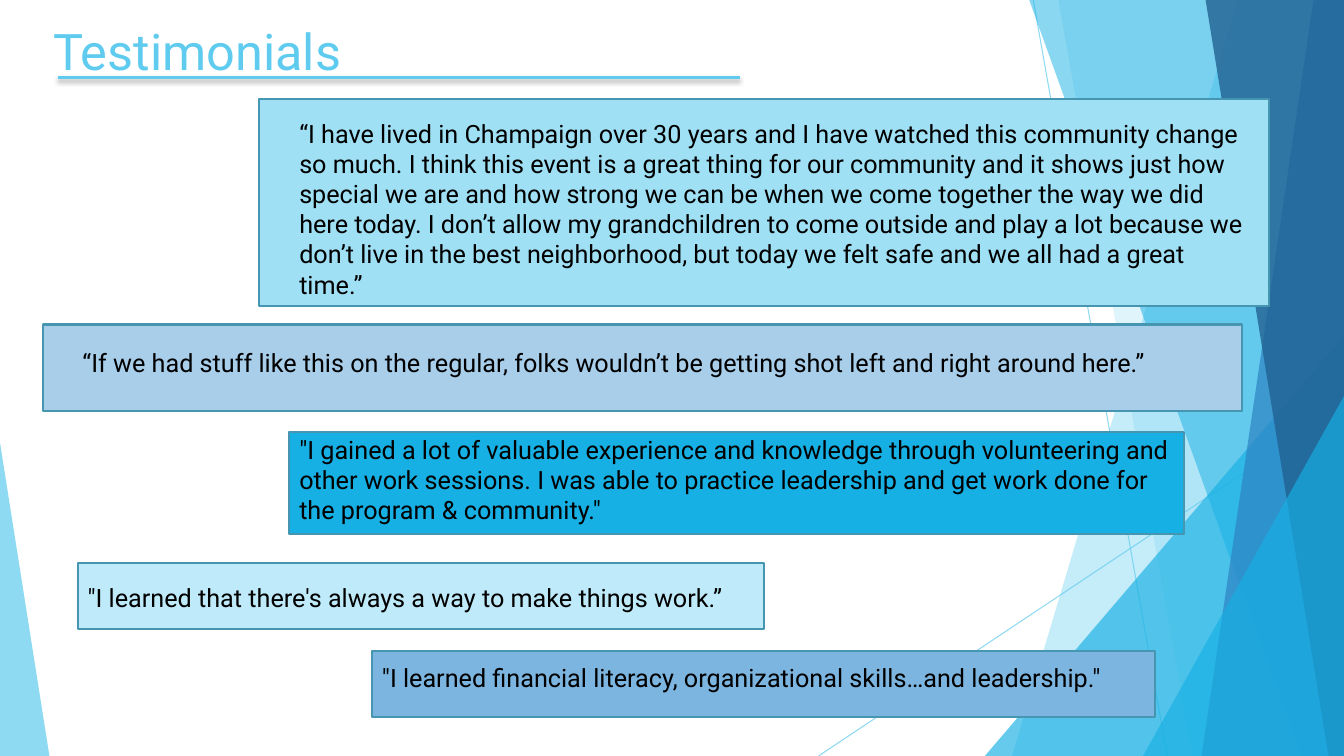
from dataclasses import dataclass

from lxml import etree
from pptx import Presentation
from pptx.dml.color import RGBColor
from pptx.enum.shapes import MSO_CONNECTOR, MSO_SHAPE
from pptx.oxml.ns import qn
from pptx.util import Inches, Pt

STRAIGHT = MSO_CONNECTOR.STRAIGHT
RECTANGLE = MSO_SHAPE.RECTANGLE
TRIANGLE = MSO_SHAPE.ISOSCELES_TRIANGLE
FONT = "Roboto"
COLORS = {
    "sky": "5FCBEF", "cyan": "17B0E4", "blue": "2E83C3", "navy": "226292",
    "border": "4696B1", "text": "000000", "shadow": "000000",
    "aqua": "9FE0F5", "powder": "A8CEEA", "ice": "BFEAF9", "steel": "7CB5E0",
}

THREADS = [((76.88, 0), (86.85, 100)), ((100, 53.73), (60.9, 100))]
# Each facet: top x, bottom x, colour, opacity; each corner: box, apex, colour, opacity.
FACETS_BACK = [(92.1, 75.3, "sky", 36), (78.75, 88.73, "sky", 20)]
FACETS_FRONT = [(76.58, 96.83, "cyan", 50), (97.73, 89.4, "blue", 70), (89.7, 98.85, "navy", 80)]
CORNER_BACK = ((73.28, 44.4, 26.72, 55.6), 1, "cyan", 66)
CORNERS_FRONT = [
    ((85.05, 52.4, 14.95, 47.6), 1, "cyan", 66),
    ((0, 58.53, 3.68, 41.47), 0, "sky", 70),
]

QUOTES = [
    ((27.68, 86.13, 58.28, 8.67), "steel", (27.68, 86.93, 58.28, 5.33),
     '"I learned financial literacy, organizational skills…and leadership."'),
    ((5.78, 74.53, 51.08, 8.67), "ice", (5.78, 76.4, 73.65, 5.33),
     '"I learned that there\'s always a way to make things work.”'),
    ((21.53, 57.2, 66.6, 13.47), "cyan", (21.53, 56.8, 66.6, 13.47),
     '"I gained a lot of valuable experience and knowledge through volunteering and other '
     'work sessions. I was able to practice leadership and get work done for the program '
     '& community."'),
    ((3.23, 42.93, 89.18, 11.47), "powder", (5.4, 45.33, 86.25, 5.33),
     "“If we had stuff like this on the regular, folks wouldn’t be getting shot left and "
     "right around here.”"),
    ((19.28, 13.07, 75.15, 27.47), "aqua", (21.53, 14.93, 72, 25.6),
     "“I have lived in Champaign over 30 years and I have watched this community change so "
     "much. I think this event is a great thing for our community and it shows just how "
     "special we are and how strong we can be when we come together the way we did here "
     "today. I don’t allow my grandchildren to come outside and play a lot because we don’t "
     "live in the best neighborhood, but today we felt safe and we all had a great time.”"),
]


@dataclass
class Box:
    """A region whose parts are placed by percentages of its size."""
    left: int
    top: int
    width: int
    height: int

    def point(self, x, y):
        """Return the slide position of a percentage point."""
        return self.left + round(self.width * x / 100), self.top + round(self.height * y / 100)

    def area(self, x, y, width, height):
        """Return left, top, width and height of a percentage area."""
        return *self.point(x, y), round(self.width * width / 100), round(self.height * height / 100)


def color(name):
    """Look up a named colour."""
    return RGBColor.from_string(COLORS[name])


def set_opacity(fill_parent, percent):
    """Make the solid fill inside an element translucent."""
    tone = fill_parent.find(qn("a:solidFill"))[0]
    etree.SubElement(tone, qn("a:alpha"), val=str(percent * 1000))


def paint(shape, tone, opacity=None):
    """Give a shape a flat fill without outline or shadow."""
    shape.shadow.inherit = False
    shape.fill.solid()
    shape.fill.fore_color.rgb = color(tone)
    shape.line.fill.background()
    if opacity:
        set_opacity(shape.fill._xPr, opacity)


def add_line(page, box, start, end, width):
    """Draw a straight sky-blue line and return it with its empty effect list."""
    line = page.shapes.add_connector(STRAIGHT, *box.point(*start), *box.point(*end))
    line.line.color.rgb = color("sky")
    line.line.width = Pt(width)
    effects = etree.SubElement(line._element.spPr, qn("a:effectLst"))
    return line, effects


def add_text(page, box, area, text, size, tone):
    """Place one wrapped paragraph."""
    frame = page.shapes.add_textbox(*box.area(*area)).text_frame
    frame.word_wrap = True
    para = frame.paragraphs[0]
    para.text = text
    para.font.name = FONT
    para.font.size = Pt(size)
    para.font.color.rgb = color(tone)


def add_facet(page, box, top_x, bottom_x, tone, opacity):
    """Draw a slanted band that reaches the right edge."""
    builder = page.shapes.build_freeform(*box.point(top_x, 0))
    corners = [(100, 0), (100, 100), (bottom_x, 100)]
    builder.add_line_segments([box.point(*corner) for corner in corners])
    paint(builder.convert_to_shape(), tone, opacity)


def add_corner(page, box, area, apex, tone, opacity):
    """Draw a right triangle with its apex on one side."""
    triangle = page.shapes.add_shape(TRIANGLE, *box.area(*area))
    triangle.adjustments[0] = apex
    paint(triangle, tone, opacity)


def add_backdrop(page, box):
    """Draw the layered facets of the background."""
    for start, end in THREADS:
        thread, _ = add_line(page, box, start, end, 0.75)
        set_opacity(thread.line.fill._xPr, 70)
    for facet in FACETS_BACK:
        add_facet(page, box, *facet)
    add_corner(page, box, *CORNER_BACK)
    for facet in FACETS_FRONT:
        add_facet(page, box, *facet)
    for corner in CORNERS_FRONT:
        add_corner(page, box, *corner)


def add_quotes(page, box):
    """Draw the coloured panels with their quotations."""
    for panel_area, tone, text_area, quote in QUOTES:
        panel = page.shapes.add_shape(RECTANGLE, *box.area(*panel_area))
        paint(panel, tone)
        panel.line.color.rgb = color("border")
        panel.line.width = Pt(1.5)
        add_text(page, box, text_area, quote, 18, "text")


def add_heading(page, box):
    """Write the title above a rule with a soft shadow."""
    add_text(page, box, (3.23, 2, 70.5, 19.2), "Testimonials", 36, "sky")
    _, effects = add_line(page, box, (4.28, 10.27), (55.05, 10.27), 2)
    shadow = etree.SubElement(
        effects, qn("a:outerShdw"), blurRad=str(Pt(3)), dist=str(Pt(2)),
        dir="5400000", rotWithShape="0")
    tone = etree.SubElement(shadow, qn("a:srgbClr"), val=COLORS["shadow"])
    etree.SubElement(tone, qn("a:alpha"), val="35000")


def main():
    """Build and save the testimonials deck."""
    deck = Presentation()
    deck.slide_width, deck.slide_height = Inches(13.33), Inches(7.5)
    page = deck.slides.add_slide(deck.slide_layouts[6])
    box = Box(0, 0, deck.slide_width, deck.slide_height)
    add_backdrop(page, box)
    add_quotes(page, box)
    add_heading(page, box)
    deck.save("out.pptx")


if __name__ == "__main__":
    main()
